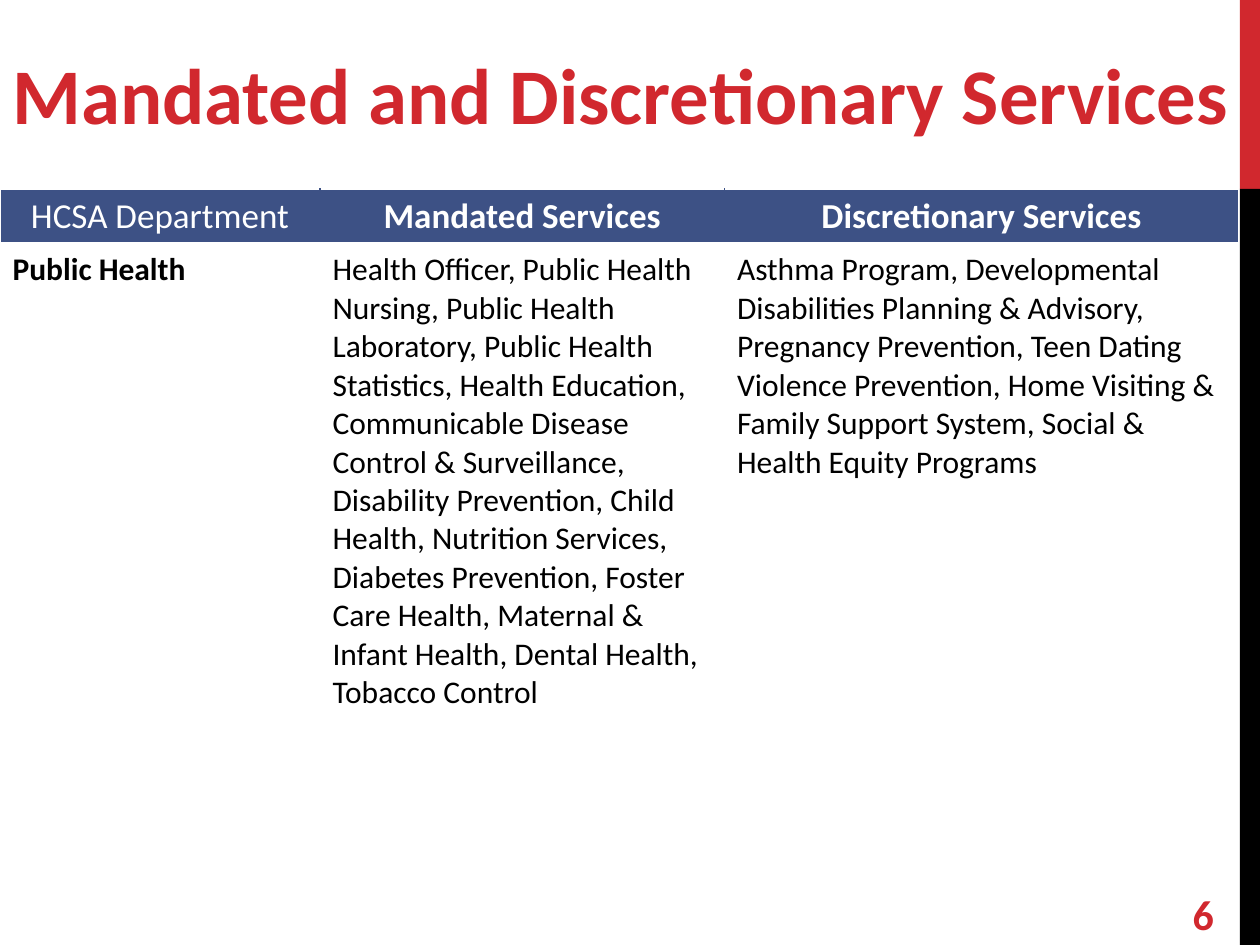
from dataclasses import dataclass

from lxml import etree
from pptx import Presentation
from pptx.dml.color import RGBColor
from pptx.enum.shapes import MSO_SHAPE
from pptx.enum.text import MSO_ANCHOR, PP_ALIGN
from pptx.oxml.ns import qn
from pptx.util import Inches, Pt

RECT = MSO_SHAPE.RECTANGLE
TOP, MIDDLE = MSO_ANCHOR.TOP, MSO_ANCHOR.MIDDLE
LEFT, CENTER = PP_ALIGN.LEFT, PP_ALIGN.CENTER


@dataclass(frozen=True)
class Theme:
    font: str = "Calibri"
    red: str = "D1282E"
    blue: str = "3D5185"
    black: str = "000000"
    white: str = "FFFFFF"
    title_size: int = 45
    number_size: int = 24
    header_size: int = 20
    body_size: int = 18


class SlideBuilder:
    def __init__(self, slide, theme):
        self.slide = slide
        self.theme = theme

    def set_text(self, tf, text, size, color, bold, align):
        p = tf.paragraphs[0]
        p.text = text
        p.alignment = align
        p.font.name = self.theme.font
        p.font.size = Pt(size)
        p.font.bold = bold
        p.font.color.rgb = RGBColor.from_string(color)

    def bar(self, x, y, w, h, color):
        sp = self.slide.shapes.add_shape(
            RECT, Inches(x), Inches(y), Inches(w), Inches(h))
        sp.shadow.inherit = False
        sp.fill.solid()
        sp.fill.fore_color.rgb = RGBColor.from_string(color)
        sp.line.fill.background()

    def text(self, x, y, w, h, text, size, align=LEFT):
        sp = self.slide.shapes.add_textbox(
            Inches(x), Inches(y), Inches(w), Inches(h))
        tf = sp.text_frame
        tf.word_wrap = True
        tf.vertical_anchor = MIDDLE
        self.set_text(tf, text, size, self.theme.red, True, align)

    def border(self, cell, side, color, width):
        tc_pr = cell._tc.get_or_add_tcPr()
        ln = etree.SubElement(tc_pr, qn(f"a:ln{side}"), w=str(Pt(width)))
        fill = etree.SubElement(ln, qn("a:solidFill"))
        etree.SubElement(fill, qn("a:srgbClr"), val=color)

    def cell(self, cell, text, is_header, bold, borders):
        t = self.theme
        for side, (color, width) in borders.items():
            self.border(cell, side, color, width)
        cell.fill.solid()
        cell.fill.fore_color.rgb = RGBColor.from_string(
            t.blue if is_header else t.white)
        cell.vertical_anchor = MIDDLE if is_header else TOP
        self.set_text(cell.text_frame, text,
                      t.header_size if is_header else t.body_size,
                      t.white if is_header else t.black,
                      bold, CENTER if is_header else LEFT)

    def table(self, x, y, col_widths, row_heights, rows):
        t = self.theme
        table = self.slide.shapes.add_table(
            len(rows), len(col_widths), Inches(x), Inches(y),
            Inches(sum(col_widths)), Inches(sum(row_heights))).table
        for column, width in zip(table.columns, col_widths):
            column.width = Inches(width)
        for row, height in zip(table.rows, row_heights):
            row.height = Inches(height)
        last = len(col_widths) - 1
        for i, row in enumerate(rows):
            is_header = i == 0
            # Header dividers blend into the fill; all other borders are white
            inner = t.blue if is_header else t.white
            for j, (text, bold) in enumerate(row):
                borders = {
                    "L": (t.white if j == 0 else inner, 1),
                    "R": (t.white if j == last else inner, 1),
                    "T": (t.white, 3 if i == 1 else 1),
                    "B": (t.white, 3 if is_header else 1),
                }
                self.cell(table.cell(i, j), text, is_header, bold, borders)


# Wording as (text, bold) for each cell
SERVICES = [
    [("HCSA Department", False),
     ("Mandated Services", True),
     ("Discretionary Services", True)],
    [("Public Health", True),
     ("Health Officer, Public Health Nursing, Public Health Laboratory, "
      "Public Health Statistics, Health Education, Communicable Disease "
      "Control & Surveillance, Disability Prevention, Child Health, "
      "Nutrition Services, Diabetes Prevention, Foster Care Health, "
      "Maternal & Infant Health, Dental Health, Tobacco Control", False),
     ("Asthma Program, Developmental Disabilities Planning & Advisory, "
      "Pregnancy Prevention, Teen Dating Violence Prevention, Home Visiting "
      "& Family Support System, Social & Health Equity Programs", False)],
]


def main():
    prs = Presentation()
    prs.slide_width, prs.slide_height = Inches(10), Inches(7.5)
    theme = Theme()
    s = SlideBuilder(prs.slides.add_slide(prs.slide_layouts[6]), theme)

    # Side bars
    s.bar(9.84, 0, 0.16, 1.5, theme.red)
    s.bar(9.84, 1.5, 0.16, 6, theme.black)

    # Services table
    s.table(0, 1.5, [2.54, 3.21, 4.08], [0.41, 3.72], SERVICES)

    # Title and slide number
    s.text(0, 0.34, 10, 0.8, "Mandated and Discretionary Services",
           theme.title_size)
    s.text(9.27, 7.01, 0.56, 0.49, "6", theme.number_size, CENTER)

    prs.save("out.pptx")


if __name__ == "__main__":
    main()
